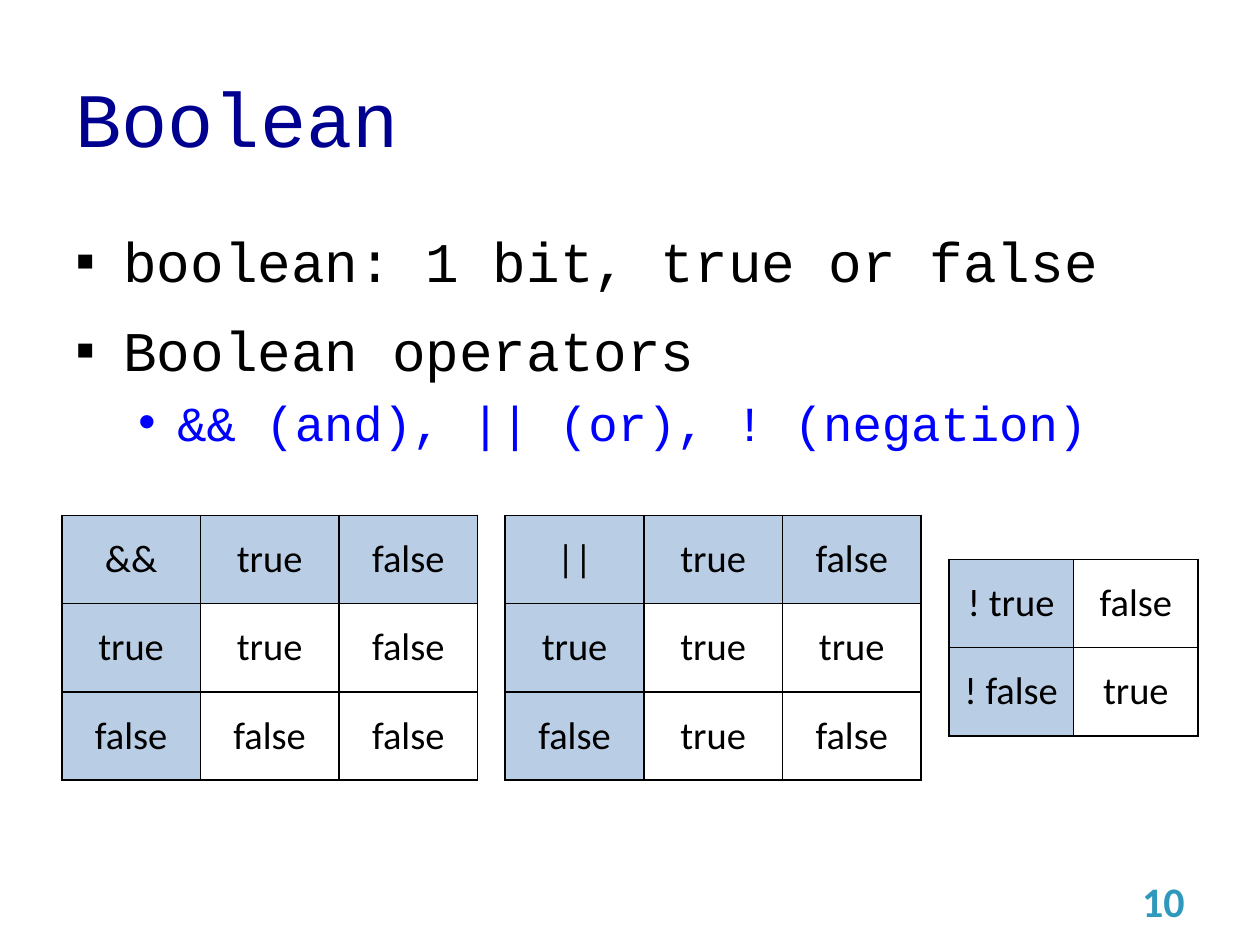
"""Build a slide on the boolean type with its truth tables."""
from lxml.etree import SubElement
from pptx import Presentation
from pptx.dml.color import RGBColor
from pptx.enum.text import MSO_ANCHOR, PP_ALIGN
from pptx.oxml.ns import qn
from pptx.util import Inches, Pt

WIDE, HIGH = 10, 7.5
CODE, SANS = "Courier New", "Calibri"
COLORS = {"title": "000090", "text": "000000", "sub": "0000FF",
          "head": "B9CDE5", "page": "2E98BD"}
TITLE, PAGE = "Boolean", "10"
LEVELS = [
    dict(mark="▪", left=0.38, hang=0.38, before=12.2, after=0, size=32, color="text"),
    dict(mark="•", left=0.81, hang=0.31, before=5.6, after=6, size=28, color="sub"),
]
POINTS = [
    (0, "boolean: 1 bit, true or false"),
    (0, "Boolean operators"),
    (1, "&& (and), || (or), ! (negation)"),
]
TABLES = [
    (1.1, 1, [["&&", "true", "false"],
              ["true", "true", "false"],
              ["false", "false", "false"]]),
    (1.1, 1, [["||", "true", "false"],
              ["true", "true", "true"],
              ["false", "true", "false"]]),
    (0.99, 0, [["! true", "false"],
               ["! false", "true"]]),
]
START, GAP, ROW, MIDDLE = 0.49, 0.22, 0.7, 5.14


def shade(name):
    return RGBColor.from_string(COLORS[name])


def write(para, text, font=SANS, size=22, color="text", bold=False,
          align=PP_ALIGN.LEFT):
    para.alignment = align
    run = para.add_run()
    run.text = text
    run.font.name, run.font.size, run.font.bold = font, Pt(size), bold
    run.font.color.rgb = shade(color)


def add_box(slide, left, top, width, height, anchor=MSO_ANCHOR.MIDDLE):
    box = slide.shapes.add_textbox(*map(Inches, (left, top, width, height)))
    frame = box.text_frame
    frame.word_wrap = True
    frame.vertical_anchor = anchor
    return frame


def add_points(frame):
    for i, (level, text) in enumerate(POINTS):
        look = LEVELS[level]
        para = frame.add_paragraph() if i else frame.paragraphs[0]
        para.level = level
        para.space_before, para.space_after = Pt(look["before"]), Pt(look["after"])
        write(para, text, font=CODE, size=look["size"], color=look["color"])
        props = para._p.get_or_add_pPr()
        props.set("marL", str(Inches(look["left"])))
        props.set("indent", str(-Inches(look["hang"])))
        SubElement(props, qn("a:buFont"), typeface="Arial")
        SubElement(props, qn("a:buChar"), char=look["mark"])


def add_edges(cell):
    props = cell._tc.get_or_add_tcPr()
    for i, side in enumerate(("lnL", "lnR", "lnT", "lnB")):
        line = props.makeelement(qn("a:" + side), {"w": str(Pt(1))})
        fill = SubElement(line, qn("a:solidFill"))
        SubElement(fill, qn("a:srgbClr"), val=COLORS["text"])
        props.insert(i, line)


def add_grid(slide, left, col, heads, rows):
    count, wide = len(rows), len(rows[0])
    high = count * ROW
    place = map(Inches, (left, MIDDLE - high / 2, wide * col, high))
    table = slide.shapes.add_table(count, wide, *place).table
    table.first_row = table.horz_banding = False
    for c in table.columns:
        c.width = Inches(col)
    for r, row in enumerate(rows):
        table.rows[r].height = Inches(ROW)
        for c, text in enumerate(row):
            cell = table.cell(r, c)
            cell.vertical_anchor = MSO_ANCHOR.MIDDLE
            write(cell.text_frame.paragraphs[0], text, align=PP_ALIGN.CENTER)
            if r < heads or c == 0:
                cell.fill.solid()
                cell.fill.fore_color.rgb = shade("head")
            else:
                cell.fill.background()
            add_edges(cell)
    return left + wide * col + GAP


def main():
    deck = Presentation()
    deck.slide_width, deck.slide_height = Inches(WIDE), Inches(HIGH)
    slide = deck.slides.add_slide(deck.slide_layouts[6])
    edge = 0.05 * WIDE
    title = add_box(slide, edge, 0.3, WIDE - 2 * edge, 1.25)
    write(title.paragraphs[0], TITLE, font=CODE, size=44, color="title")
    add_points(add_box(slide, edge, 1.75, WIDE - 2 * edge, 4.95, MSO_ANCHOR.TOP))
    left = START
    for col, heads, rows in TABLES:
        left = add_grid(slide, left, col, heads, rows)
    page = add_box(slide, 7.17, 6.95, 2.33, 0.4)
    write(page.paragraphs[0], PAGE, size=24, color="page", bold=True,
          align=PP_ALIGN.RIGHT)
    deck.save("out.pptx")


if __name__ == "__main__":
    main()
